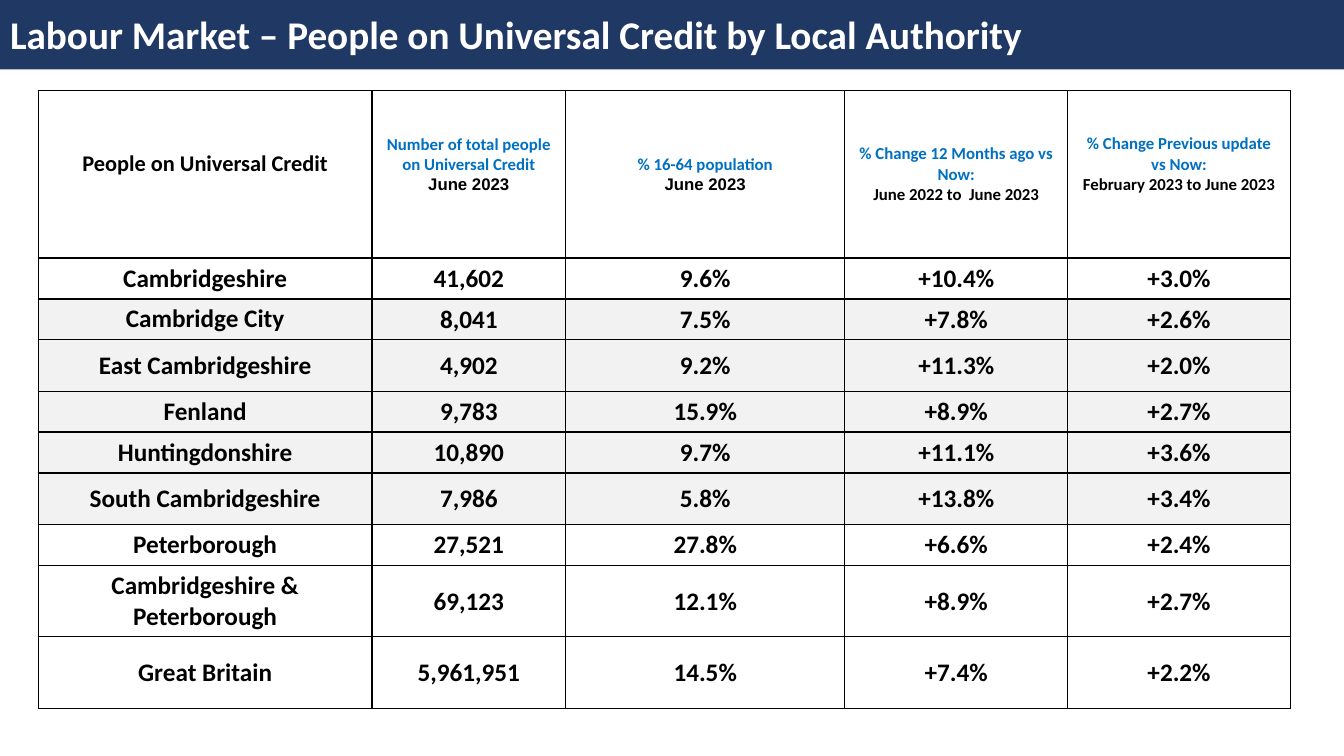
import pptx
import pptx.dml.color
import pptx.enum.text
import pptx.oxml.ns
import pptx.util
import lxml.etree

Inches = pptx.util.Inches
ALIGN = pptx.enum.text.PP_ALIGN
MIDDLE = pptx.enum.text.MSO_ANCHOR.MIDDLE

NAVY, BLUE, BLACK, WHITE, GREY = "203864", "0070C0", "000000", "FFFFFF", "F2F2F2"

COLUMN_WIDTHS = [3.31, 1.92, 2.77, 2.21, 2.21]

# Each header: paragraphs of (text, format) spans, then its bottom margin
BLUE_SMALL = {"size": 12, "color": BLUE}
BLACK_SMALL = {"size": 12}
ARIAL_SMALL = {"size": 12, "font": "Arial"}
HEADERS = [
    ([[("People on Universal Credit", {"size": 16})]], 0.25),
    ([[("Number of total people on Universal Credit ", BLUE_SMALL),
       ("June 2023", ARIAL_SMALL)]], 0.25),
    ([[("% 16-64 population", BLUE_SMALL)], [("June 2023", ARIAL_SMALL)]], 0.05),
    ([[("% Change 12 Months ago vs Now:", BLUE_SMALL)],
      [("June 2022 to  June 2023", BLACK_SMALL)]], 0.05),
    ([[("% Change Previous update vs Now:", BLUE_SMALL)],
      [("February 2023 to June 2023", BLACK_SMALL)]], 0.25),
]
HEADER_HEIGHT = 1.66

# Area, its four values, row height, row fill
AREAS = [
    (["Cambridgeshire", "41,602", "9.6%", "+10.4%", "+3.0%"], 0.4, WHITE),
    (["Cambridge City", "8,041", "7.5%", "+7.8%", "+2.6%"], 0.4, GREY),
    (["East Cambridgeshire", "4,902", "9.2%", "+11.3%", "+2.0%"], 0.51, GREY),
    (["Fenland", "9,783", "15.9%", "+8.9%", "+2.7%"], 0.4, GREY),
    (["Huntingdonshire", "10,890", "9.7%", "+11.1%", "+3.6%"], 0.4, GREY),
    (["South Cambridgeshire", "7,986", "5.8%", "+13.8%", "+3.4%"], 0.51, GREY),
    (["Peterborough", "27,521", "27.8%", "+6.6%", "+2.4%"], 0.4, WHITE),
    (["Cambridgeshire & Peterborough", "69,123", "12.1%", "+8.9%", "+2.7%"], 0.71, WHITE),
    (["Great Britain", "5,961,951", "14.5%", "+7.4%", "+2.2%"], 0.71, WHITE),
]


def rgb(color):
    return pptx.dml.color.RGBColor.from_string(color)


def add_text(para, text, size=18, font="Calibri", color=BLACK, align=ALIGN.CENTER):
    para.alignment = align
    span = para.add_run()
    span.text = text
    span.font.size = pptx.util.Pt(size)
    span.font.name = font
    span.font.bold = True
    span.font.color.rgb = rgb(color)


def add_borders(cell, color=BLACK, width=1):
    qn = pptx.oxml.ns.qn
    properties = cell._tc.get_or_add_tcPr()
    for side in ("a:lnL", "a:lnR", "a:lnT", "a:lnB"):
        line = lxml.etree.SubElement(properties, qn(side), w=str(pptx.util.Pt(width)))
        solid = lxml.etree.SubElement(line, qn("a:solidFill"))
        lxml.etree.SubElement(solid, qn("a:srgbClr"), val=color)


def fill_cell(cell, paragraphs, fill, margins):
    add_borders(cell)
    cell.fill.solid()
    cell.fill.fore_color.rgb = rgb(fill)
    cell.vertical_anchor = MIDDLE
    (cell.margin_left, cell.margin_top,
     cell.margin_right, cell.margin_bottom) = map(Inches, margins)
    for number, spans in enumerate(paragraphs):
        frame = cell.text_frame
        para = frame.add_paragraph() if number else frame.paragraphs[0]
        for text, text_format in spans:
            add_text(para, text, **text_format)


def place_title(slide, text, left, top, width, height):
    title = slide.shapes.title
    title.left, title.top = Inches(left), Inches(top)
    title.width, title.height = Inches(width), Inches(height)
    title.fill.solid()
    title.fill.fore_color.rgb = rgb(NAVY)
    frame = title.text_frame
    frame.auto_size = pptx.enum.text.MSO_AUTO_SIZE.NONE
    frame.word_wrap = True
    frame.vertical_anchor = MIDDLE
    add_text(frame.paragraphs[0], text, size=28, color=WHITE, align=ALIGN.LEFT)


def place_table(slide, left, top, width, height):
    box = slide.shapes.add_table(len(AREAS) + 1, len(COLUMN_WIDTHS), Inches(left),
                                 Inches(top), Inches(width), Inches(height))
    table = box.table
    table.first_row = table.horz_banding = False
    for column, share in zip(table.columns, COLUMN_WIDTHS):
        column.width = Inches(width * share / sum(COLUMN_WIDTHS))

    # Header row
    table.rows[0].height = Inches(HEADER_HEIGHT)
    for column, (paragraphs, bottom) in enumerate(HEADERS):
        fill_cell(table.cell(0, column), paragraphs, WHITE, (0.1, 0.05, 0.1, bottom))

    # One row for each area
    for row, (texts, row_height, fill) in enumerate(AREAS, start=1):
        table.rows[row].height = Inches(row_height)
        for column, text in enumerate(texts):
            margins = (0.01, 0.01, 0.01, 0) if column else (0.1, 0.05, 0.1, 0.05)
            fill_cell(table.cell(row, column), [[(text, {})]], fill, margins)


def main():
    deck = pptx.Presentation()
    deck.slide_width, deck.slide_height = Inches(13.33), Inches(7.5)
    slide = deck.slides.add_slide(deck.slide_layouts[5])
    place_title(slide, "Labour Market – People on Universal Credit by Local Authority",
                0, -0.02, 13.33, 0.71)
    place_table(slide, 0.38, 0.9, 12.42, 6.1)
    deck.save("out.pptx")


if __name__ == "__main__":
    main()
